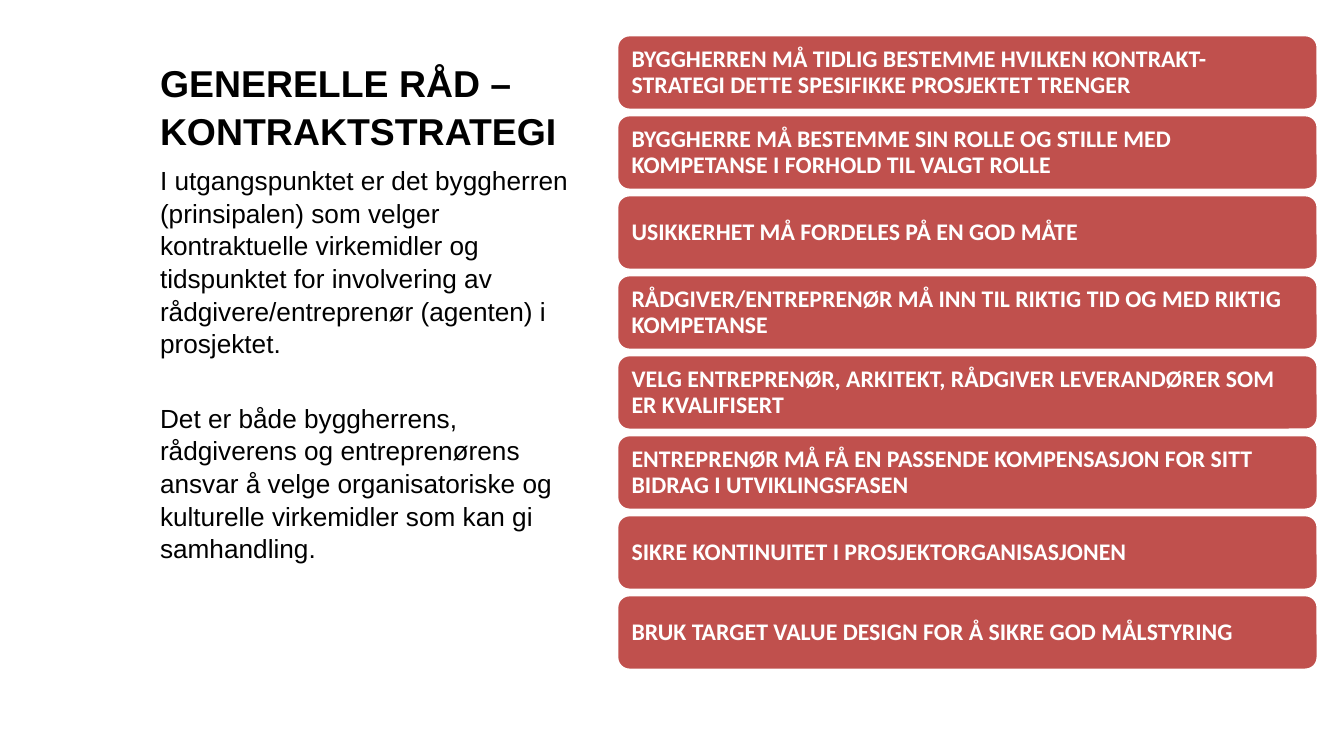
from pptx import Presentation
from pptx.dml.color import RGBColor
from pptx.enum.shapes import MSO_SHAPE
from pptx.enum.text import MSO_ANCHOR, MSO_AUTO_SIZE, PP_ALIGN
from pptx.util import Emu, Pt

BLACK = RGBColor(0x00, 0x00, 0x00)
WHITE = RGBColor(0xFF, 0xFF, 0xFF)
RED = RGBColor(0xC0, 0x50, 0x4D)

TITLE = "GENERELLE RÅD – KONTRAKTSTRATEGI"
INTRODUCTION = [
    "I utgangspunktet er det byggherren (prinsipalen) som velger kontraktuelle virkemidler "
    "og tidspunktet for involvering av rådgivere/entreprenør (agenten) i prosjektet.",
    "Det er både byggherrens, rådgiverens og entreprenørens ansvar å velge "
    "organisatoriske og kulturelle virkemidler som kan gi samhandling.",
]
ADVICE = [
    "BYGGHERREN MÅ TIDLIG BESTEMME HVILKEN KONTRAKT- STRATEGI DETTE SPESIFIKKE PROSJEKTET TRENGER",
    "BYGGHERRE MÅ BESTEMME SIN ROLLE OG STILLE MED KOMPETANSE I FORHOLD TIL VALGT ROLLE",
    "USIKKERHET MÅ FORDELES PÅ EN GOD MÅTE",
    "RÅDGIVER/ENTREPRENØR MÅ INN TIL RIKTIG TID OG MED RIKTIG KOMPETANSE",
    "VELG ENTREPRENØR, ARKITEKT, RÅDGIVER LEVERANDØRER SOM ER KVALIFISERT",
    "ENTREPRENØR MÅ FÅ EN PASSENDE KOMPENSASJON FOR SITT BIDRAG I UTVIKLINGSFASEN",
    "SIKRE KONTINUITET I PROSJEKTORGANISASJONEN",
    "BRUK TARGET VALUE DESIGN FOR Å SIKRE GOD MÅLSTYRING",
]


def px(length):
    return Emu(round(length * 914400 / 100.8))


class AdviceSlide:
    """Holds the text styles and the current slide, and adds its elements."""

    styles = {
        "title": {"name": "Arial", "size": Pt(26.7), "bold": True, "color": BLACK, "spacing": 1.06},
        "body": {"name": "Arial", "size": Pt(18.7), "bold": False, "color": BLACK, "spacing": 1.04},
        "card": {"name": "Calibri", "size": Pt(17), "bold": True, "color": WHITE, "spacing": 0.9},
    }

    def __init__(self, presentation):
        self.slide = presentation.slides.add_slide(presentation.slide_layouts[5])

    def set_text(self, shape, texts, style, anchor, margin, gap=0):
        frame = shape.text_frame
        frame_format = {
            "word_wrap": True,
            "auto_size": MSO_AUTO_SIZE.NONE,
            "vertical_anchor": anchor,
            "margin_left": px(margin),
            "margin_right": px(margin),
            "margin_top": px(5),
            "margin_bottom": px(5),
        }
        for attribute, value in frame_format.items():
            setattr(frame, attribute, value)
        font_format = dict(self.styles[style])
        color = font_format.pop("color")
        spacing = font_format.pop("spacing")
        for index, text in enumerate(texts):
            paragraph = frame.paragraphs[0] if index == 0 else frame.add_paragraph()
            paragraph.text = text
            paragraph.alignment = PP_ALIGN.LEFT
            paragraph.line_spacing = spacing
            paragraph.space_before = Pt(gap if index else 0)
            for attribute, value in font_format.items():
                setattr(paragraph.font, attribute, value)
            paragraph.font.color.rgb = color

    def title(self, text, left, top, width, height):
        shape = self.slide.shapes.title
        place = {"left": left, "top": top, "width": width, "height": height}
        for attribute, value in place.items():
            setattr(shape, attribute, px(value))
        self.set_text(shape, [text], "title", MSO_ANCHOR.BOTTOM, 10)

    def body(self, texts, left, top, width, height):
        shape = self.slide.shapes.add_textbox(px(left), px(top), px(width), px(height))
        self.set_text(shape, texts, "body", MSO_ANCHOR.TOP, 10, gap=30)

    def card(self, text, left, top, width, height):
        shape = self.slide.shapes.add_shape(
            MSO_SHAPE.ROUNDED_RECTANGLE, px(left), px(top), px(width), px(height)
        )
        shape.shadow.inherit = False
        shape.fill.solid()
        shape.fill.fore_color.rgb = RED
        shape.line.color.rgb = WHITE
        shape.line.width = Pt(2)
        self.set_text(shape, [text], "card", MSO_ANCHOR.MIDDLE, 11)


def main():
    presentation = Presentation()
    presentation.slide_width = px(1344)
    presentation.slide_height = px(756)
    slide = AdviceSlide(presentation)
    slide.title(TITLE, 150, 30, 443, 128)
    slide.body(INTRODUCTION, 150, 158, 443, 517)
    for index, text in enumerate(ADVICE):
        slide.card(text, 617, 35 + 80 * index, 701, 75)
    presentation.save("out.pptx")


if __name__ == "__main__":
    main()
